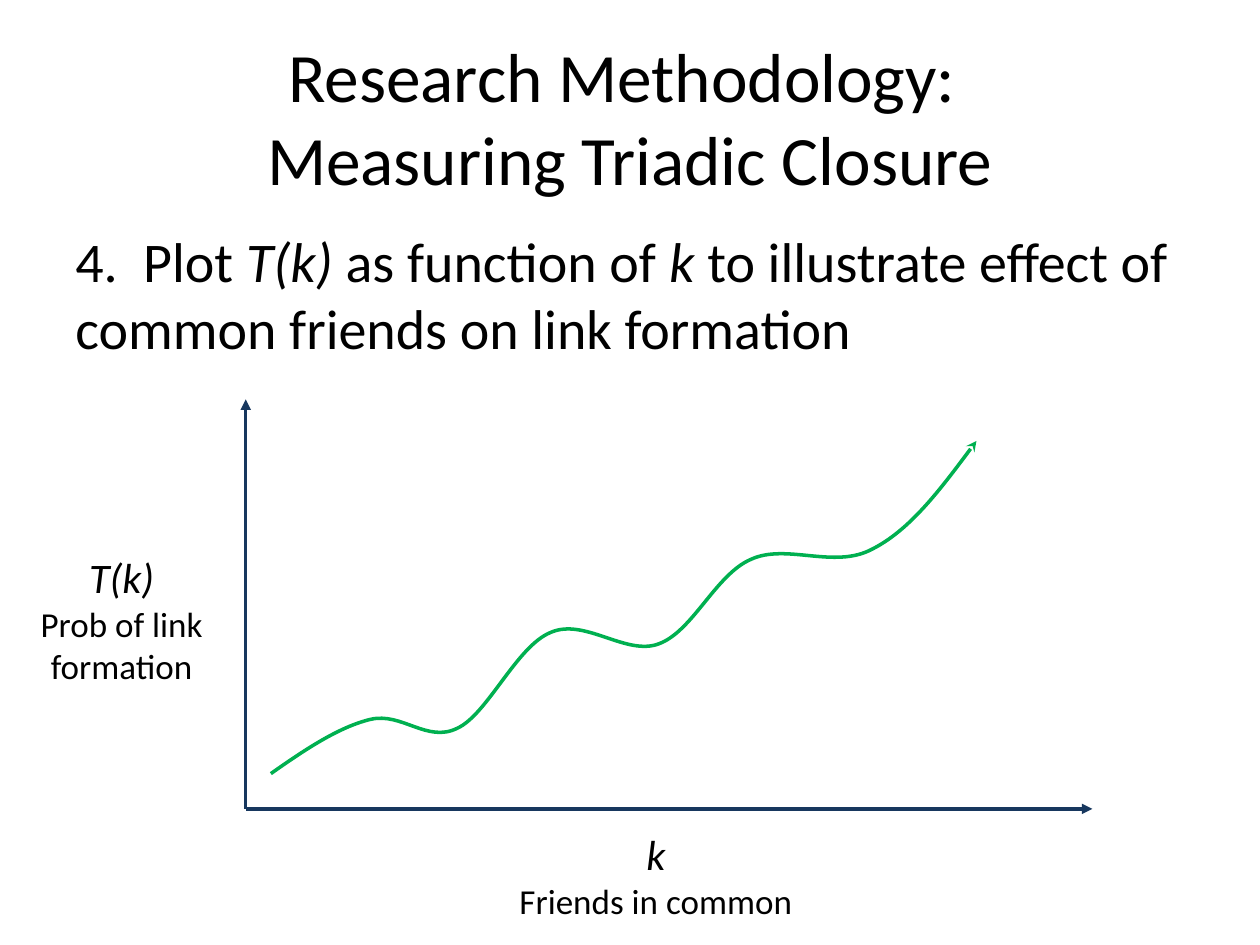
from typing import NamedTuple

from pptx import Presentation
from pptx.dml.color import RGBColor
from pptx.enum.shapes import MSO_CONNECTOR
from pptx.enum.text import MSO_ANCHOR, MSO_AUTO_SIZE, PP_ALIGN
from pptx.oxml.ns import qn
from pptx.util import Inches, Pt
from lxml.etree import SubElement

FONT = "Calibri"
BLACK, NAVY, GREEN = "000000", "17375E", "00B050"
ORIGIN = (1.95, 6.42)
AXIS_ENDS = [(1.95, 3.17), (8.67, 6.42)]

# Start point, then two control points and an end point for each bend.
CURVE = [
    (2.15, 6.14),
    (2.42, 5.95), (2.69, 5.77), (2.94, 5.71),
    (3.19, 5.65), (3.39, 5.9), (3.63, 5.78),
    (3.87, 5.67), (4.1, 5.13), (4.37, 5.02),
    (4.64, 4.9), (4.97, 5.21), (5.23, 5.11),
    (5.5, 5.01), (5.68, 4.56), (5.96, 4.44),
    (6.24, 4.31), (6.62, 4.52), (6.92, 4.36),
    (7.22, 4.21), (7.49, 3.85), (7.75, 3.5),
]


class Run(NamedTuple):
    text: str
    size: float
    italic: bool = False


class Label(NamedTuple):
    box: tuple[float, float, float, float]
    paragraphs: list[list[Run]]
    align: PP_ALIGN = PP_ALIGN.CENTER


LABELS = [
    Label((0.5, 1.75, 9, 1.25), [[
        Run("4.  Plot ", 32), Run("T(k) ", 32, True), Run("as function of ", 32),
        Run("k", 32, True),
        Run(" to illustrate effect of common friends on link formation", 32),
    ]], PP_ALIGN.LEFT),
    Label((0.17, 4.33, 1.59, 1.18),
          [[Run("T(k)", 24, True)], [Run("Prob of link", 20)], [Run("formation", 20)]]),
    Label((3.33, 6.53, 3.75, 0.84),
          [[Run("k", 24, True)], [Run("Friends in common", 20)]]),
]


def color(hex_code: str) -> RGBColor:
    return RGBColor.from_string(hex_code)


def place(shape, box: tuple[float, float, float, float]) -> None:
    shape.left, shape.top, shape.width, shape.height = map(Inches, box)


def add_text(paragraph, text: str, *, size: float, italic: bool = False) -> None:
    """Append formatted text, turning each newline into a line break."""
    for index, line in enumerate(text.split("\n")):
        if index:
            paragraph.add_line_break()
        run = paragraph.add_run()
        run.text = line
        run.font.name = FONT
        run.font.size = Pt(size)
        run.font.italic = italic
        run.font.color.rgb = color(BLACK)


def add_title(slide, text: str) -> None:
    title = slide.shapes.title
    place(title, (0.5, 0.3, 9, 1.25))
    frame = title.text_frame
    frame.auto_size = MSO_AUTO_SIZE.NONE
    frame.vertical_anchor = MSO_ANCHOR.MIDDLE
    frame.paragraphs[0].alignment = PP_ALIGN.CENTER
    add_text(frame.paragraphs[0], text, size=39.6)


def add_label(slide, label: Label) -> None:
    frame = slide.shapes.add_textbox(*map(Inches, label.box)).text_frame
    frame.word_wrap = True
    for index, runs in enumerate(label.paragraphs):
        paragraph = frame.add_paragraph() if index else frame.paragraphs[0]
        paragraph.alignment = label.align
        for run in runs:
            add_text(paragraph, run.text, size=run.size, italic=run.italic)


def style_arrow(shape, hex_code: str, head: str) -> None:
    shape.line.color.rgb = color(hex_code)
    shape.line.width = Pt(2)
    SubElement(shape.line._get_or_add_ln(), qn("a:tailEnd"), type=head)


def add_axis(slide, end: tuple[float, float]) -> None:
    axis = slide.shapes.add_connector(
        MSO_CONNECTOR.STRAIGHT, *map(Inches, ORIGIN + end))
    style_arrow(axis, NAVY, "triangle")
    SubElement(axis._element.spPr, qn("a:effectLst"))


def add_curve(slide, points: list[tuple[float, float]]) -> None:
    """Draw the points as a freeform, then join each three into a Bézier bend."""
    start, *rest = [(Inches(x), Inches(y)) for x, y in points]
    builder = slide.shapes.build_freeform(*start)
    builder.add_line_segments(rest, close=False)
    curve = builder.convert_to_shape()
    curve.shadow.inherit = False
    curve.fill.background()
    style_arrow(curve, GREEN, "stealth")

    outline = curve._element.find(".//" + qn("a:path"))
    segments = outline.findall(qn("a:lnTo"))
    for first in range(0, len(segments), 3):
        bend = SubElement(outline, qn("a:cubicBezTo"))
        for segment in segments[first:first + 3]:
            bend.append(segment[0])
            outline.remove(segment)


def main() -> None:
    deck = Presentation()
    deck.slide_width, deck.slide_height = Inches(10), Inches(7.5)
    slide = deck.slides.add_slide(deck.slide_layouts.get_by_name("Title Only"))
    add_title(slide, "Research Methodology: \nMeasuring Triadic Closure")
    for label in LABELS:
        add_label(slide, label)
    for end in AXIS_ENDS:
        add_axis(slide, end)
    add_curve(slide, CURVE)
    deck.save("out.pptx")


if __name__ == "__main__":
    main()
